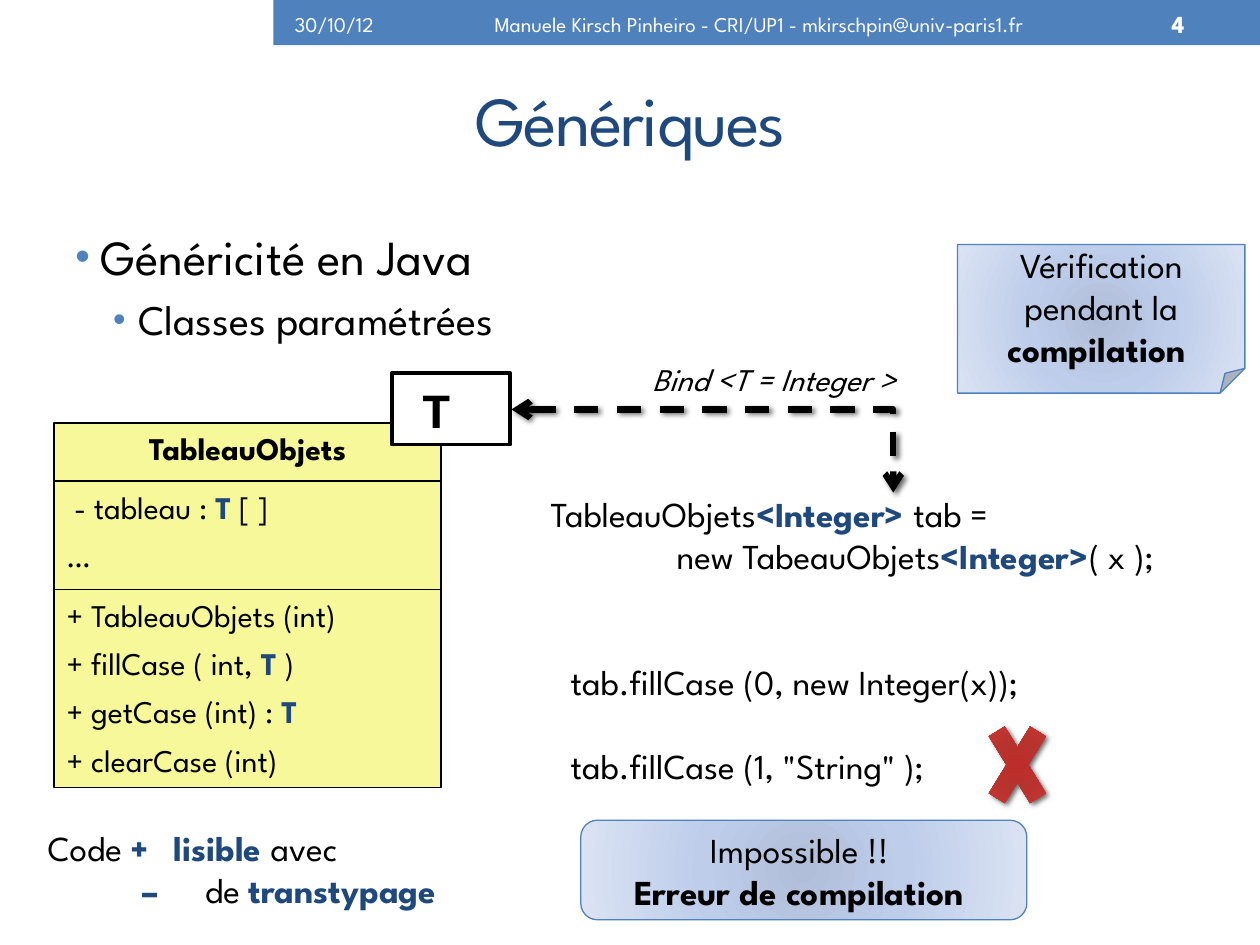
from lxml import etree
from pptx import Presentation
from pptx.dml.color import RGBColor
from pptx.enum import dml, shapes, text
from pptx.oxml import ns
from pptx.util import Emu, Inches, Pt

BLACK, WHITE, NAVY, BLUE, YELLOW = "000000", "FFFFFF", "1F497D", "4F81BD", "F6F89A"
PALE_BLUE = [(0, "B0BED9"), (45, "BECDEA"), (100, "DBE3F3")]
RED = [(0, "BD2D29"), (34, "B8322E"), (70, "CD3834"), (100, "C0504D")]
LEFT, CENTER, RIGHT = text.PP_ALIGN.LEFT, text.PP_ALIGN.CENTER, text.PP_ALIGN.RIGHT
TOP, MIDDLE = text.MSO_ANCHOR.TOP, text.MSO_ANCHOR.MIDDLE
KIND = shapes.MSO_SHAPE


def color(value):
    return RGBColor.from_string(value)


def child(parent, tag, **attributes):
    return etree.SubElement(parent, ns.qn(tag), {k: str(v) for k, v in attributes.items()})


class Sheet:
    """Slide on a grid of 100 columns by 75 rows, with its text style."""

    def __init__(self, deck, font="League Spartan"):
        self.page = deck.slides.add_slide(deck.slide_layouts[5])
        self.font = font
        self.column = deck.slide_width / 100
        self.row = deck.slide_height / 75

    def place(self, left, top, width, height):
        return (Emu(round(left * self.column)), Emu(round(top * self.row)),
                Emu(round(width * self.column)), Emu(round(height * self.row)))

    def title(self, words, area):
        box = self.page.shapes.title
        box.left, box.top, box.width, box.height = self.place(*area)
        self.fill_text(box, [words], size=40, ink=NAVY, align=CENTER, anchor=MIDDLE)
        box.text_frame.paragraphs[0].runs[0].font._element.set("spc", "-100")

    def label(self, area, lines, **style):
        box = self.page.shapes.add_textbox(*self.place(*area))
        self.fill_text(box, lines, **style)
        return box

    def shape(self, kind, area, fill, line=None, weight=1.0):
        """Preset shape; a list of stops as fill makes a radial gradient."""
        box = self.page.shapes.add_shape(kind, *self.place(*area))
        box.shadow.inherit = False
        if isinstance(fill, str):
            box.fill.solid()
            box.fill.fore_color.rgb = color(fill)
        else:
            self.radial(box, fill)
        if line:
            box.line.color.rgb = color(line)
            box.line.width = Pt(weight)
        else:
            box.line.fill.background()
        return box

    def radial(self, box, stops):
        gradient = etree.Element(ns.qn("a:gradFill"), rotWithShape="1")
        steps = child(gradient, "a:gsLst")
        for position, value in stops:
            child(child(steps, "a:gs", pos=position * 1000), "a:srgbClr", val=value)
        center = child(gradient, "a:path", path="circle")
        child(center, "a:fillToRect", l=50000, t=50000, r=50000, b=50000)
        box._element.spPr.find(ns.qn("a:prstGeom")).addnext(gradient)

    def shadow(self, item):
        properties = item._element.spPr
        effects = properties.find(ns.qn("a:effectLst"))
        if effects is None:
            effects = child(properties, "a:effectLst")
        drop = child(effects, "a:outerShdw", blurRad=Pt(3), dist=Pt(2), dir=45 * 60000)
        child(child(drop, "a:srgbClr", val=BLACK), "a:alpha", val=60000)

    def elbow(self, start, end):
        """Dashed line with one corner and an arrowhead at each end."""
        x, y, right, bottom = self.place(*start, *end)
        line = self.page.shapes.add_connector(shapes.MSO_CONNECTOR.ELBOW, x, y, right, bottom)
        line._element.spPr.find(ns.qn("a:prstGeom")).set("prst", "bentConnector2")
        line.line.color.rgb = color(BLACK)
        line.line.width = Pt(3.5)
        line.line.dash_style = dml.MSO_LINE.DASH
        for tag in ("a:headEnd", "a:tailEnd"):
            child(line.line._ln, tag, type="arrow")
        self.shadow(line)

    def fill_text(self, box, lines, size=18, ink=BLACK, align=LEFT, anchor=TOP, bold=None,
                  italic=None, font=None, gap=0, inset=(0.1, 0.05, 0.1, 0.05), accent=NAVY):
        """Fill a box; words between asterisks are bold in the accent colour.

        A line is a string, or a string and a dict of indent, gap, tab, size, bullet.
        """
        frame = box.text_frame
        frame.word_wrap = True
        frame.auto_size = text.MSO_AUTO_SIZE.NONE
        frame.vertical_anchor = anchor
        (frame.margin_left, frame.margin_top,
         frame.margin_right, frame.margin_bottom) = map(Inches, inset)
        for number, line in enumerate(lines):
            words, own = (line, {}) if isinstance(line, str) else line
            para = frame.add_paragraph() if number else frame.paragraphs[0]
            self.indent(para, **{k: own[k] for k in ("indent", "tab", "bullet") if k in own})
            para.alignment = align
            para.space_before = Pt(own.get("gap", gap) if number else 0)
            para.font.name = font or self.font
            para.font.size = Pt(own.get("size", size))
            para.font.color.rgb = color(ink)
            para.font.bold, para.font.italic = bold, italic
            for index, part in enumerate(words.split("*")):
                if part:
                    span = para.add_run()
                    span.text = part
                    if index % 2:
                        span.font.bold = True
                        span.font.color.rgb = color(accent)

    def indent(self, para, indent=0, tab=None, bullet=False):
        properties = para._p.get_or_add_pPr()
        properties.set("marL", str(Inches(indent)))
        properties.set("indent", str(Inches(-0.2 if bullet else 0)))
        if bullet:
            child(child(properties, "a:buClr"), "a:srgbClr", val=BLUE)
            child(properties, "a:buSzPct", val=85000)
            child(properties, "a:buFont", typeface="Arial")
            child(properties, "a:buChar", char="•")
        if tab:
            child(child(properties, "a:tabLst"), "a:tab", pos=Inches(tab), algn="l")


def main():
    deck = Presentation()
    deck.slide_width, deck.slide_height = Inches(10), Inches(7.5)
    sheet = Sheet(deck)

    sheet.shape(KIND.RECTANGLE, (21.7, 0, 78.3, 3.6), BLUE)
    sheet.title("Génériques", (5.1, 4.4, 89.9, 10))
    sheet.label((5, 17.5, 70, 11), [
        ("Généricité en Java", dict(indent=0.2, bullet=True, size=28)),
        ("Classes paramétrées", dict(indent=0.5, bullet=True, size=24, gap=4.8))])

    header = dict(ink=WHITE, anchor=MIDDLE)
    sheet.label((22.4, 0.2, 11, 3.4), ["30/10/12"], size=12, **header)
    sheet.label((31.9, 0.2, 56.7, 3.4),
                ["Manuele Kirsch Pinheiro - CRI/UP1 - mkirschpin@univ-paris1.fr"],
                size=12, align=CENTER, **header)
    sheet.label((89.4, 0.2, 5.6, 3.4), ["4"], size=14, align=RIGHT, bold=True, **header)

    class_parts = [
        (33.6, 8.6, ["TableauObjets"], dict(align=CENTER, bold=True)),
        (38.2, 11.8, [("- tableau : *T* [ ]", dict(indent=0.06)), "…"], {}),
        (46.8, 15.7, ["+ TableauObjets (int)", "+ fillCase ( int, *T* )",
                      "+ getCase (int) : *T*", "+ clearCase (int)"], {})]
    for top, height, lines, style in class_parts:
        part = sheet.shape(KIND.RECTANGLE, (4.3, top, 30.7, height), YELLOW, BLACK)
        sheet.fill_text(part, lines, gap=6, **style)

    parameter = sheet.shape(KIND.RECTANGLE, (31.1, 29.6, 9.4, 5.7), WHITE, BLACK, 2.08)
    sheet.fill_text(parameter, ["T "], size=28, align=CENTER, bold=True, font="Courier New",
                    inset=(0.04, 0.05, 0.04, 0.05))

    sheet.label((43.7, 39.1, 54.3, 23.6), [
        "TableauObjets*<Integer> *tab =",
        ("new TabeauObjets*<Integer>*( x );", dict(indent=1)),
        ("tab.fillCase (0, new Integer(x));", dict(indent=0.16, gap=48)),
        ('tab.fillCase (1, "String" );', dict(indent=0.16, gap=24))],
        size=20, inset=(0, 0, 0, 0))
    sheet.elbow((40.6, 32.5), (70.9, 39.1))
    sheet.label((50.8, 28.1, 24.8, 4), ["Bind <T = Integer >"], italic=True)

    cross = sheet.shape(KIND.MATH_MULTIPLY, (77.6, 55.6, 6.3, 10.2), RED)
    sheet.shadow(cross)

    callout = dict(size=20, align=CENTER, anchor=MIDDLE, accent=BLACK)
    note = sheet.shape(KIND.FOLDED_CORNER, (76, 19.4, 22.8, 11.8), PALE_BLUE, BLUE, 0.75)
    sheet.fill_text(note, ["Vérification pendant la *compilation *"],
                    inset=(0.04, 0.05, 0.04, 0.05), **callout)
    error = sheet.shape(KIND.ROUNDED_RECTANGLE, (46.1, 65.1, 35.4, 7.9), PALE_BLUE, BLUE, 0.75)
    sheet.fill_text(error, ["Impossible !! ", "*Erreur de compilation *"], **callout)

    sheet.label((2.8, 65.1, 34.4, 7.7), [
        ("Code *+\tlisible *avec", dict(tab=0.95)),
        ("*–*\tde *transtypage*", dict(indent=0.75, tab=1.03))], size=20)

    deck.save("out.pptx")


if __name__ == "__main__":
    main()
